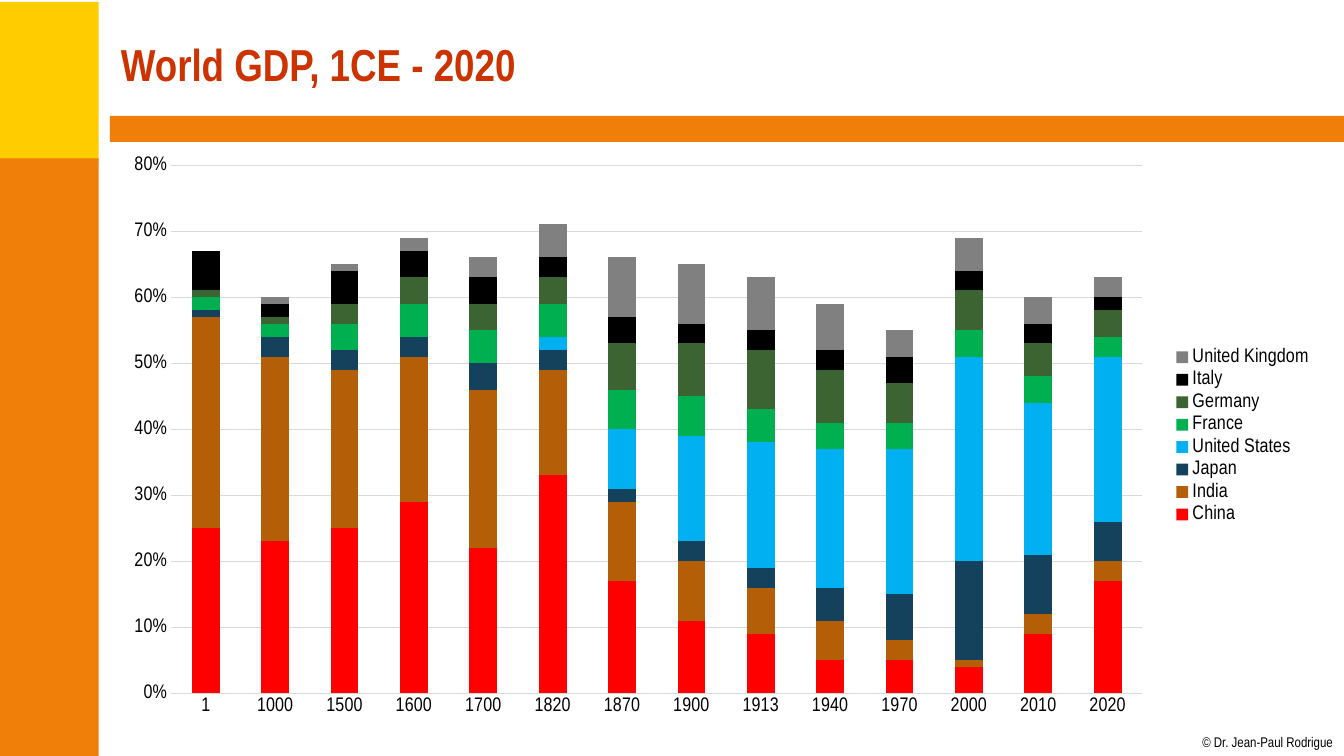
"""Build a slide with stacked columns of national shares of world GDP."""
import lxml.etree
import pptx
import pptx.chart.data
import pptx.dml.color
import pptx.enum.chart
import pptx.enum.shapes
import pptx.enum.text
import pptx.oxml.ns
import pptx.util
from pptx.util import Cm

FONT = "Arial Narrow"
COLORS = {
    "background": "FFFFFF", "yellow": "FFCC00", "orange": "F07F09",
    "title": "CC3300", "text": "000000", "grid": "D9D9D9",
    "China": "FF0000", "India": "B45F07", "Japan": "14425D",
    "United States": "00B0F0", "France": "00B050", "Germany": "3B6432",
    "Italy": "000000", "United Kingdom": "808080",
}
TITLE = "World GDP, 1CE - 2020"
COPYRIGHT = "© Dr. Jean-Paul Rodrigue"
YEARS = ["1", "1000", "1500", "1600", "1700", "1820", "1870",
         "1900", "1913", "1940", "1970", "2000", "2010", "2020"]
SHARES_PERCENT = {
    "China": [25, 23, 25, 29, 22, 33, 17, 11, 9, 5, 5, 4, 9, 17],
    "India": [32, 28, 24, 22, 24, 16, 12, 9, 7, 6, 3, 1, 3, 3],
    "Japan": [1, 3, 3, 3, 4, 3, 2, 3, 3, 5, 7, 15, 9, 6],
    "United States": [0, 0, 0, 0, 0, 2, 9, 16, 19, 21, 22, 31, 23, 25],
    "France": [2, 2, 4, 5, 5, 5, 6, 6, 5, 4, 4, 4, 4, 3],
    "Germany": [1, 1, 3, 4, 4, 4, 7, 8, 9, 8, 6, 6, 5, 4],
    "Italy": [6, 2, 5, 4, 4, 3, 4, 3, 3, 3, 4, 3, 3, 2],
    "United Kingdom": [0, 1, 1, 2, 3, 5, 9, 9, 8, 7, 4, 5, 4, 3],
}
BANDS = [
    ("yellow", -0.05, 0.05, 2.54, 4.01),
    ("orange", -0.05, 3.99, 2.54, 15.06),
    ("orange", 2.77, 2.92, 31.1, 0.66),
]
TITLE_BOX = (2.79, 0.28, 30.48, 2.64)
CHART_BOX = (2.79, 3.63, 30.48, 14.71)
COPYRIGHT_BOX = (30.3, 18.49, 3.33, 0.43)
PLOT_AREA = (0.05, 0.036, 0.803, 0.905)
LEGEND_AREA = (0.876, 0.343, 0.12, 0.314)


def color(name):
    return pptx.dml.color.RGBColor.from_string(COLORS[name])


def lengths(box):
    return [Cm(value) for value in box]


def format_font(font, size, name="text", bold=False):
    font.name = FONT
    font.size = pptx.util.Pt(size)
    font.bold = bold
    font.color.rgb = color(name)


def write_text(shape, text, size, name="text", bold=False, inset=None,
               anchor=pptx.enum.text.MSO_ANCHOR.TOP,
               align=pptx.enum.text.PP_ALIGN.LEFT, wrap=True):
    frame = shape.text_frame
    frame.text = text
    frame.word_wrap = wrap
    frame.vertical_anchor = anchor
    if inset is not None:
        frame.margin_left = frame.margin_right = Cm(inset)
        frame.margin_top = frame.margin_bottom = Cm(inset)
    paragraph = frame.paragraphs[0]
    paragraph.alignment = align
    format_font(paragraph.runs[0].font, size, name, bold)


def place_chart_part(part, index, area, inner=False):
    qualified = pptx.oxml.ns.qn
    for old_layout in part.findall(qualified("c:layout")):
        part.remove(old_layout)
    layout = lxml.etree.Element(qualified("c:layout"))
    manual = lxml.etree.SubElement(layout, qualified("c:manualLayout"))
    settings = [("layoutTarget", "inner")] if inner else []
    settings += [("xMode", "edge"), ("yMode", "edge")]
    settings += zip("xywh", area)
    for tag, value in settings:
        lxml.etree.SubElement(manual, qualified("c:" + tag), val=str(value))
    part.insert(index, layout)


def add_band(slide, name, *box):
    band = slide.shapes.add_shape(
        pptx.enum.shapes.MSO_SHAPE.RECTANGLE, *lengths(box))
    band.shadow.inherit = False
    band.fill.solid()
    band.fill.fore_color.rgb = color(name)
    band.line.fill.background()


def add_share_chart(slide):
    data = pptx.chart.data.CategoryChartData(number_format="0%")
    data.categories = YEARS
    for country, shares in SHARES_PERCENT.items():
        data.add_series(country, [share / 100 for share in shares])
    chart = slide.shapes.add_chart(
        pptx.enum.chart.XL_CHART_TYPE.COLUMN_STACKED,
        *lengths(CHART_BOX), data).chart
    chart.has_title = False
    format_font(chart.font, 14)

    plot = chart.plots[0]
    plot.gap_width = 150
    plot.overlap = 100
    plot.vary_by_categories = False
    for series in plot.series:
        series.format.fill.solid()
        series.format.fill.fore_color.rgb = color(series.name)

    for axis in (chart.category_axis, chart.value_axis):
        axis.major_tick_mark = pptx.enum.chart.XL_TICK_MARK.NONE
        axis.minor_tick_mark = pptx.enum.chart.XL_TICK_MARK.NONE
        format_font(axis.tick_labels.font, 14)
    value_axis = chart.value_axis
    value_axis.minimum_scale = 0
    value_axis.maximum_scale = 0.8
    value_axis.major_unit = 0.1
    value_axis.tick_labels.number_format = "0%"
    value_axis.tick_labels.number_format_is_linked = False
    value_axis.format.line.fill.background()
    value_axis.has_major_gridlines = True
    for line in (value_axis.major_gridlines.format.line,
                 chart.category_axis.format.line):
        line.color.rgb = color("grid")
        line.width = pptx.util.Pt(0.75)

    chart.has_legend = True
    legend = chart.legend
    legend.position = pptx.enum.chart.XL_LEGEND_POSITION.RIGHT
    legend.include_in_layout = False
    format_font(legend.font, 14)
    place_chart_part(legend._element, 1, LEGEND_AREA)
    plot_area = chart._chartSpace.find(".//" + pptx.oxml.ns.qn("c:plotArea"))
    place_chart_part(plot_area, 0, PLOT_AREA, inner=True)


def main():
    presentation = pptx.Presentation()
    presentation.slide_width = Cm(33.87)
    presentation.slide_height = Cm(19.05)
    slide = presentation.slides.add_slide(presentation.slide_layouts[5])
    slide.background.fill.solid()
    slide.background.fill.fore_color.rgb = color("background")

    for band in BANDS:
        add_band(slide, *band)
    title = slide.shapes.title
    title.left, title.top, title.width, title.height = lengths(TITLE_BOX)
    write_text(title, TITLE, 32, name="title", bold=True,
               anchor=pptx.enum.text.MSO_ANCHOR.MIDDLE)
    add_share_chart(slide)
    copyright_box = slide.shapes.add_textbox(*lengths(COPYRIGHT_BOX))
    write_text(copyright_box, COPYRIGHT, 10, inset=0, wrap=False)
    presentation.save("out.pptx")


if __name__ == "__main__":
    main()
